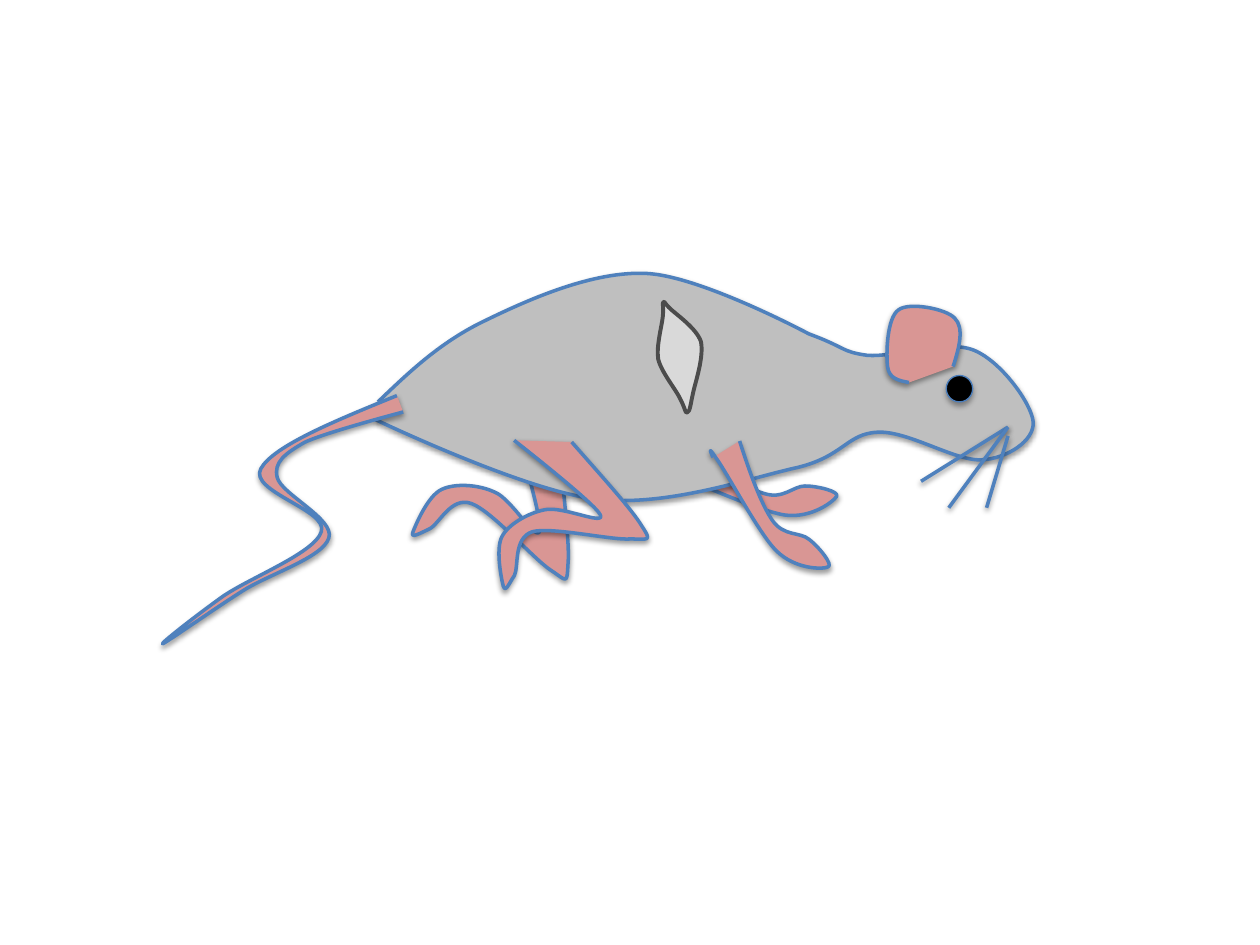
from lxml import etree
from pptx import Presentation
from pptx.dml.color import RGBColor
from pptx.enum.shapes import MSO_CONNECTOR, MSO_SHAPE
from pptx.oxml.ns import qn
from pptx.util import Pt

STRAIGHT = MSO_CONNECTOR.STRAIGHT
OVAL = MSO_SHAPE.OVAL
GRID = 0.72  # points per drawing unit; all coordinates below are in units
PINK, GREY, PATCH_GREY, BLACK = "D99694", "BFBFBF", "D9D9D9", "000000"
BLUE, EYE_BLUE, DARK_GREY = "4F81BD", "4B7EBC", "4C4C4C"

# Outlines: a start point, then one row per curve (two controls and an end)
FAR_HIND_LEG = [
    (411, 342),
    (433, 373, 456, 404, 462, 418), (469, 432, 467, 429, 452, 428),
    (436, 427, 388, 410, 371, 413), (354, 416, 357, 440, 352, 447),
    (347, 454, 343, 461, 342, 456), (341, 450, 338, 425, 345, 415),
    (352, 405, 369, 397, 383, 396), (397, 394, 432, 415, 429, 405),
    (426, 395, 364, 336, 364, 336)]
FAR_FRONT_LEG = [
    (558, 343),
    (574, 364, 590, 385, 603, 394), (616, 404, 627, 396, 636, 399),
    (645, 402, 661, 412, 657, 415), (653, 418, 633, 425, 614, 416),
    (596, 407, 557, 370, 545, 361), (533, 352, 543, 362, 543, 362)]
BODY = [
    (300, 319),
    (325, 295, 350, 271, 386, 254), (421, 237, 471, 215, 513, 217),
    (556, 219, 642, 265, 642, 265), (672, 276, 667, 279, 688, 282),
    (710, 284, 751, 269, 773, 278), (795, 287, 819, 321, 820, 335),
    (821, 350, 799, 364, 779, 365), (758, 366, 721, 342, 697, 343),
    (672, 344, 670, 362, 633, 371), (596, 379, 529, 403, 473, 396),
    (417, 390, 298, 333, 298, 333)]
TAIL = [
    (315, 314),
    (266, 334, 217, 354, 207, 372), (197, 390, 261, 405, 255, 422),
    (250, 439, 197, 459, 176, 474), (155, 489, 127, 511, 129, 511),
    (132, 510, 169, 484, 191, 470), (212, 456, 256, 443, 261, 427),
    (266, 412, 223, 392, 220, 379), (217, 367, 226, 360, 242, 351),
    (259, 343, 320, 327, 320, 327)]
NEAR_FRONT_LEG = [
    (587, 350),
    (595, 375, 604, 400, 613, 413), (622, 426, 635, 422, 642, 428),
    (650, 434, 662, 449, 657, 450), (653, 452, 631, 452, 616, 437),
    (602, 423, 577, 375, 568, 363), (560, 351, 566, 363, 566, 363)]
NEAR_HIND_LEG = [
    (440, 351),
    (469, 373, 498, 394, 508, 405), (519, 416, 515, 414, 501, 417),
    (487, 421, 438, 420, 424, 427), (410, 435, 419, 456, 417, 464),
    (414, 471, 413, 479, 410, 474), (408, 470, 398, 447, 401, 436),
    (404, 425, 418, 413, 430, 408), (443, 402, 480, 411, 474, 403),
    (468, 395, 395, 359, 395, 359)]
PATCH = [
    (519, 254),
    (520, 261, 519, 278, 523, 288), (528, 298, 543, 309, 548, 316),
    (553, 322, 554, 326, 555, 324), (557, 323, 556, 317, 556, 307),
    (556, 298, 558, 278, 553, 267), (547, 257, 528, 250, 522, 246),
    (516, 242, 518, 242, 517, 243), (516, 244, 518, 246, 519, 254)]
EAR = [
    (759, 286),
    (761, 270, 762, 254, 753, 248), (745, 242, 715, 242, 708, 250),
    (700, 258, 705, 287, 708, 296), (711, 305, 719, 305, 727, 305)]
WHISKERS = [(800, 339, 731, 382), (800, 339, 753, 403), (800, 346, 783, 403)]


def units(*values):
    return [Pt(value * GRID) for value in values]


def color(value):
    return RGBColor.from_string(value)


def set_shadow(shape, opacity=38, distance=1.6):
    """Replace the theme shadow; an opacity of 0 leaves no shadow."""
    properties = shape._element.spPr
    for old in properties.findall(qn("a:effectLst")):
        properties.remove(old)
    effects = etree.SubElement(properties, qn("a:effectLst"))
    if opacity:
        shadow = etree.SubElement(
            effects, qn("a:outerShdw"), blurRad=str(Pt(3.1)),
            dist=str(Pt(distance)), dir="5400000", rotWithShape="0")
        tint = etree.SubElement(shadow, qn("a:srgbClr"), val=BLACK)
        etree.SubElement(tint, qn("a:alpha"), val=str(opacity * 1000))


def set_line(shape, line, width):
    shape.line.color.rgb = color(line)
    shape.line.width = Pt(width)


def set_fill(shape, fill):
    shape.fill.solid()
    shape.fill.fore_color.rgb = color(fill)


def bend_segments(shape, frame):
    """Turn each three straight segments into one curve, set in the frame."""
    left, top, width, height = frame
    outline = shape._element.find(".//" + qn("a:path"))
    for point in outline.iter(qn("a:pt")):
        point.set("x", str(int(point.get("x")) + shape.left - left))
        point.set("y", str(int(point.get("y")) + shape.top - top))
    segments = outline.findall(qn("a:lnTo"))
    for first in range(0, len(segments), 3):
        curve = etree.Element(qn("a:cubicBezTo"))
        segments[first].addprevious(curve)
        for segment in segments[first:first + 3]:
            curve.append(segment[0])
            outline.remove(segment)
    outline.set("w", str(width))
    outline.set("h", str(height))
    shape.left, shape.top, shape.width, shape.height = frame


def add_curve(page, outline, frame, fill=PINK, line=BLUE, width=2,
              rotation=0, closed=False, opacity=38):
    start, *curves = outline
    vertices = [units(*row[i:i + 2]) for row in curves for i in (0, 2, 4)]
    builder = page.shapes.build_freeform(*units(*start))
    builder.add_line_segments(vertices, close=closed)
    shape = builder.convert_to_shape()
    bend_segments(shape, units(*frame))
    shape.rotation = rotation
    set_fill(shape, fill)
    set_line(shape, line, width)
    set_shadow(shape, opacity)


def add_whisker(page, ends):
    whisker = page.shapes.add_connector(STRAIGHT, *units(*ends))
    set_line(whisker, BLUE, 2)
    set_shadow(whisker)


def add_eye(page, frame):
    eye = page.shapes.add_shape(OVAL, *units(*frame))
    set_fill(eye, BLACK)
    set_line(eye, EYE_BLUE, 0.75)
    set_shadow(eye, opacity=35, distance=1.8)


def main():
    deck = Presentation()
    deck.slide_width, deck.slide_height = Pt(720), Pt(540)
    page = deck.slides.add_slide(deck.slide_layouts[6])

    # Far legs, behind the body
    add_curve(page, FAR_HIND_LEG, (331, 345, 134, 134), rotation=29.5)
    add_curve(page, FAR_FRONT_LEG, (550, 333, 94, 101), rotation=341.3)

    # Body and tail
    add_curve(page, BODY, (298, 217, 522, 181), fill=GREY)
    add_curve(page, TAIL, (129, 314, 191, 196))

    # Whiskers
    for ends in WHISKERS:
        add_whisker(page, ends)

    # Near legs
    add_curve(page, NEAR_FRONT_LEG, (564, 350, 94, 101))
    add_curve(page, NEAR_HIND_LEG, (384, 354, 128, 128), rotation=11.7)

    # Patch on the flank
    add_curve(page, PATCH, (508, 248, 56, 72), fill=PATCH_GREY, line=DARK_GREY,
              width=2.25, rotation=12.9, closed=True, opacity=0)

    # Ear and eye
    add_curve(page, EAR, (702, 243, 59, 64), rotation=10.8)
    add_eye(page, (751, 298, 21, 21))

    deck.save("out.pptx")


if __name__ == "__main__":
    main()
